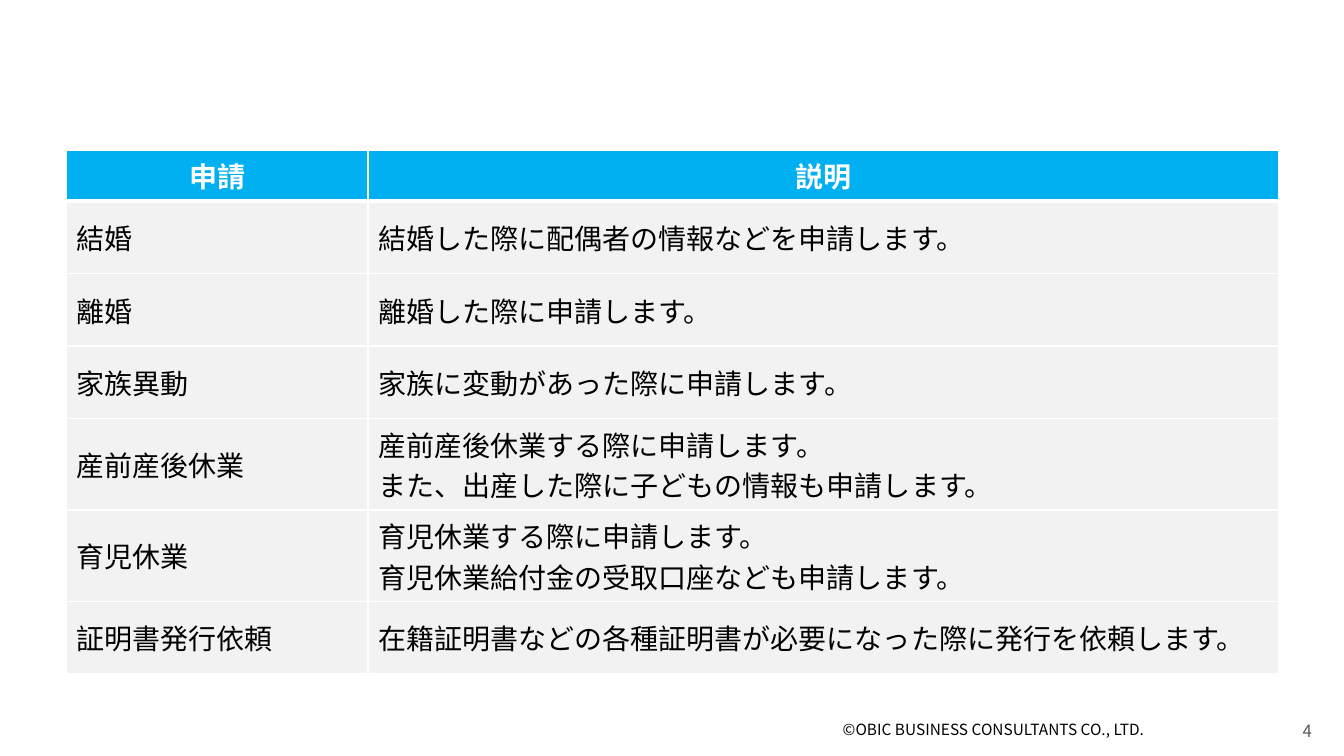
from lxml.etree import SubElement
from pptx import Presentation
from pptx.dml.color import RGBColor
from pptx.enum.text import MSO_ANCHOR, PP_ALIGN
from pptx.oxml.ns import qn
from pptx.util import Inches, Pt

FONT = "Noto Sans CJK JP"
WHITE = RGBColor(0xFF, 0xFF, 0xFF)
BLACK = RGBColor(0, 0, 0)
GRAY = RGBColor(0x59, 0x59, 0x59)
HEADER_BLUE = RGBColor(0x00, 0xB0, 0xF0)
ROW_GRAY = RGBColor(0xF2, 0xF2, 0xF2)

APPLICATIONS = [
    ("申請", "説明"),
    ("結婚", "結婚した際に配偶者の情報などを申請します。"),
    ("離婚", "離婚した際に申請します。"),
    ("家族異動", "家族に変動があった際に申請します。"),
    ("産前産後休業", "産前産後休業する際に申請します。\nまた、出産した際に子どもの情報も申請します。"),
    ("育児休業", "育児休業する際に申請します。\n育児休業給付金の受取口座なども申請します。"),
    ("証明書発行依頼", "在籍証明書などの各種証明書が必要になった際に発行を依頼します。"),
]


def write(frame, text, size, color, align=PP_ALIGN.LEFT, bold=False):
    frame.text = text
    for paragraph in frame.paragraphs:
        paragraph.alignment = align
        font = paragraph.font
        font.name, font.size, font.bold = FONT, Pt(size), bold
        font.color.rgb = color
        defaults = paragraph._p.pPr.find(qn("a:defRPr"))
        SubElement(defaults, qn("a:ea"), typeface=FONT)


def set_borders(cell, top, bottom):
    properties = cell._tc.get_or_add_tcPr()
    for side, width in (("L", 1), ("R", 1), ("T", top), ("B", bottom)):
        line = SubElement(properties, qn(f"a:ln{side}"), w=str(Pt(width)))
        fill = SubElement(line, qn("a:solidFill"))
        SubElement(fill, qn("a:srgbClr"), val=str(WHITE))


def add_application_table(slide, left, top, width, height):
    name_width, header_height = Inches(2.99), Inches(0.45)
    table = slide.shapes.add_table(
        len(APPLICATIONS), 2, left, top, width, height).table
    table.horz_banding = False
    table.columns[0].width = name_width
    table.columns[1].width = width - name_width
    row_height = (height - header_height) // (len(APPLICATIONS) - 1)
    for index, texts in enumerate(APPLICATIONS):
        header = index == 0
        table.rows[index].height = header_height if header else row_height
        for cell, text in zip(table.rows[index].cells, texts):
            set_borders(cell, 3 if index == 1 else 1, 3 if header else 1)
            cell.fill.solid()
            cell.fill.fore_color.rgb = HEADER_BLUE if header else ROW_GRAY
            cell.vertical_anchor = MSO_ANCHOR.MIDDLE
            write(cell.text_frame, text, 20, WHITE if header else BLACK,
                  PP_ALIGN.CENTER if header else PP_ALIGN.LEFT, header)


def add_footer(slide, left, top, width, height):
    copyright_box = slide.shapes.add_textbox(left, top, Inches(4.5), height)
    number_width = Inches(3)
    number_box = slide.shapes.add_textbox(
        left + width - number_width, top, number_width, height)
    for box in (copyright_box, number_box):
        box.text_frame.word_wrap = True
    write(copyright_box.text_frame, "©OBIC BUSINESS CONSULTANTS CO., LTD.", 11, BLACK)
    write(number_box.text_frame, "4", 12, GRAY, PP_ALIGN.RIGHT)


def main():
    deck = Presentation()
    deck.slide_width, deck.slide_height = Inches(13.33), Inches(7.5)
    slide = deck.slides.add_slide(deck.slide_layouts[6])
    add_application_table(slide, Inches(0.66), Inches(1.49), Inches(12.02), Inches(4.77))
    add_footer(slide, Inches(8.26), Inches(7.1), Inches(4.85), Inches(0.4))
    deck.save("out.pptx")


if __name__ == "__main__":
    main()
